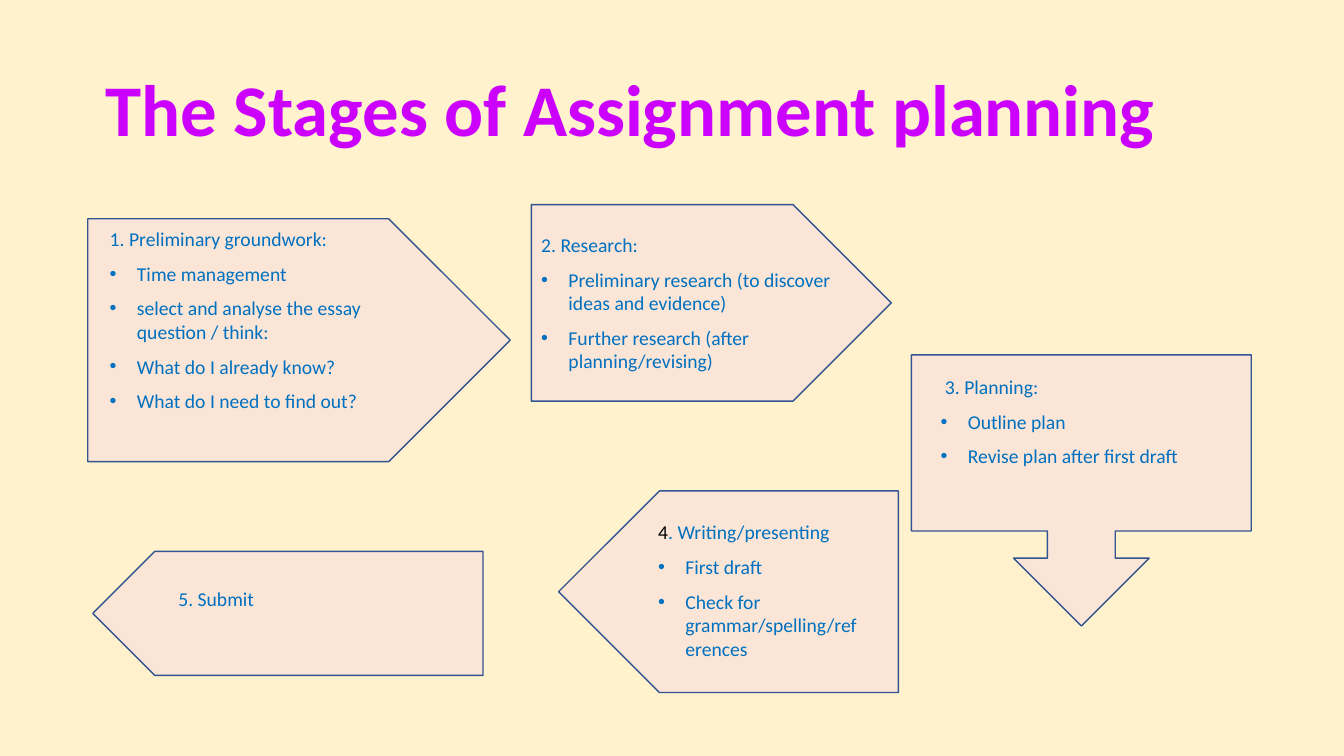
from dataclasses import dataclass

from lxml.etree import SubElement
from pptx import Presentation
from pptx.dml.color import RGBColor
from pptx.enum.shapes import MSO_SHAPE as Preset
from pptx.enum.text import MSO_ANCHOR as Anchor, MSO_AUTO_SIZE as AutoSize, PP_ALIGN as Align
from pptx.oxml.ns import qn
from pptx.slide import Slide
from pptx.text.text import Font, TextFrame
from pptx.util import Emu, Pt

PX = 9144  # 100 px to the inch
TITLE_ONLY = 5
CREAM, PEACH, NAVY = "FFF2CC", "FBE5D6", "325491"
PURPLE, BLUE, BLACK = "CC00FF", "0070C0", "000000"

Box = tuple[int, int, int, int]


@dataclass
class Stage:
    """One step of the plan; without a text box its words sit in the panel."""
    preset: Preset
    panel: Box
    number: str
    heading: str
    bullets: tuple[str, ...] = ()
    text_box: Box | None = None
    rotation: int = 0
    number_colour: str = BLUE


STAGES = [
    Stage(Preset.PENTAGON, (87, 217, 419, 241), "1", ". Preliminary groundwork:",
          ("Time management", "select and analyse the essay question / think:",
           "What do I already know?", "What do I need to find out?"),
          text_box=(99, 220, 350, 231)),
    Stage(Preset.PENTAGON, (527, 203, 357, 195), "2", ". Research:",
          ("Preliminary research (to discover ideas and evidence)",
           "Further research (after planning/revising)")),
    Stage(Preset.DOWN_ARROW_CALLOUT, (904, 352, 337, 269), " 3", ". Planning:",
          ("Outline plan", "Revise plan after first draft"),
          text_box=(923, 367, 291, 103)),
    Stage(Preset.PENTAGON, (554, 487, 337, 200), "4", ". Writing/presenting",
          ("First draft", "Check for grammar/spelling/references"),
          text_box=(643, 511, 221, 220), rotation=180, number_colour=BLACK),
    Stage(Preset.PENTAGON, (92, 547, 387, 123), "5", ". Submit",
          text_box=(167, 577, 375, 68), rotation=180),
]


def px(*lengths: int) -> list[Emu]:
    return [Emu(length * PX) for length in lengths]


def colour(value: str) -> RGBColor:
    return RGBColor.from_string(value)


def style_font(font: Font, size: int, value: str, bold: bool = False) -> None:
    font.name = "Calibri"
    font.size = Pt(size)
    font.bold = bold
    font.color.rgb = colour(value)


def add_bullet(para) -> None:
    """Give a paragraph a hanging bullet; call before its font is set."""
    props = para._p.get_or_add_pPr()
    props.set("marL", str(27 * PX))
    props.set("indent", str(-27 * PX))
    SubElement(props, qn("a:buFont")).set("typeface", "Arial")
    SubElement(props, qn("a:buChar")).set("char", "•")


def write_stage(frame: TextFrame, stage: Stage) -> None:
    frame.word_wrap = True
    for index, line in enumerate((stage.number, *stage.bullets)):
        para = frame.paragraphs[0] if index == 0 else frame.add_paragraph()
        para.alignment = Align.LEFT
        para.space_after = Pt(8)
        if index:
            add_bullet(para)
        style_font(para.font, 14, BLUE)
        span = para.add_run()
        span.text = line
        if index == 0:
            if stage.number_colour != BLUE:
                span.font.color.rgb = colour(stage.number_colour)
            para.add_run().text = stage.heading


def draw_stage(page: Slide, stage: Stage) -> None:
    panel = page.shapes.add_shape(stage.preset, *px(*stage.panel))
    panel.rotation = stage.rotation
    panel.shadow.inherit = False
    panel.fill.solid()
    panel.fill.fore_color.rgb = colour(PEACH)
    panel.line.color.rgb = colour(NAVY)
    panel.line.width = Pt(1)
    if stage.text_box:
        frame = page.shapes.add_textbox(*px(*stage.text_box)).text_frame
    else:
        frame = panel.text_frame
        frame.vertical_anchor = Anchor.MIDDLE
    write_stage(frame, stage)


def draw_title(page: Slide, text: str) -> None:
    title = page.shapes.title
    title.left, title.top, title.width, title.height = px(92, 40, 1150, 145)
    frame = title.text_frame
    frame.text = text
    frame.auto_size = AutoSize.NONE
    frame.vertical_anchor = Anchor.MIDDLE
    frame.margin_left, frame.margin_right = px(13, 13)
    frame.margin_top, frame.margin_bottom = px(7, 7)
    para = frame.paragraphs[0]
    para.alignment = Align.LEFT
    para.line_spacing = 0.9
    style_font(para.font, 52, PURPLE, bold=True)


def main() -> None:
    deck = Presentation()
    deck.slide_width, deck.slide_height = px(1333, 750)
    page = deck.slides.add_slide(deck.slide_layouts[TITLE_ONLY])
    page.background.fill.solid()
    page.background.fill.fore_color.rgb = colour(CREAM)
    draw_title(page, "The Stages of Assignment planning")
    for stage in STAGES:
        draw_stage(page, stage)
    deck.save("out.pptx")


if __name__ == "__main__":
    main()
